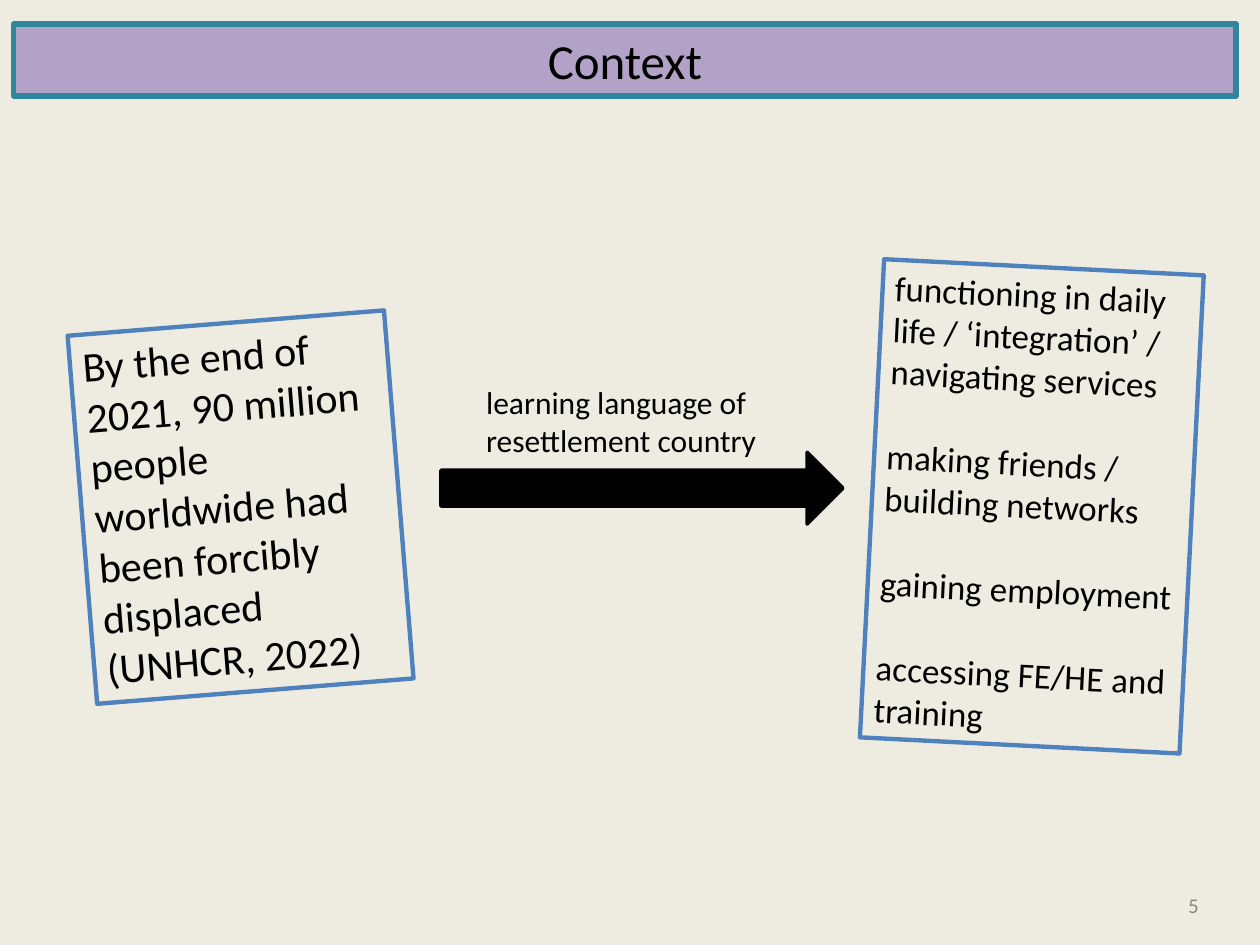
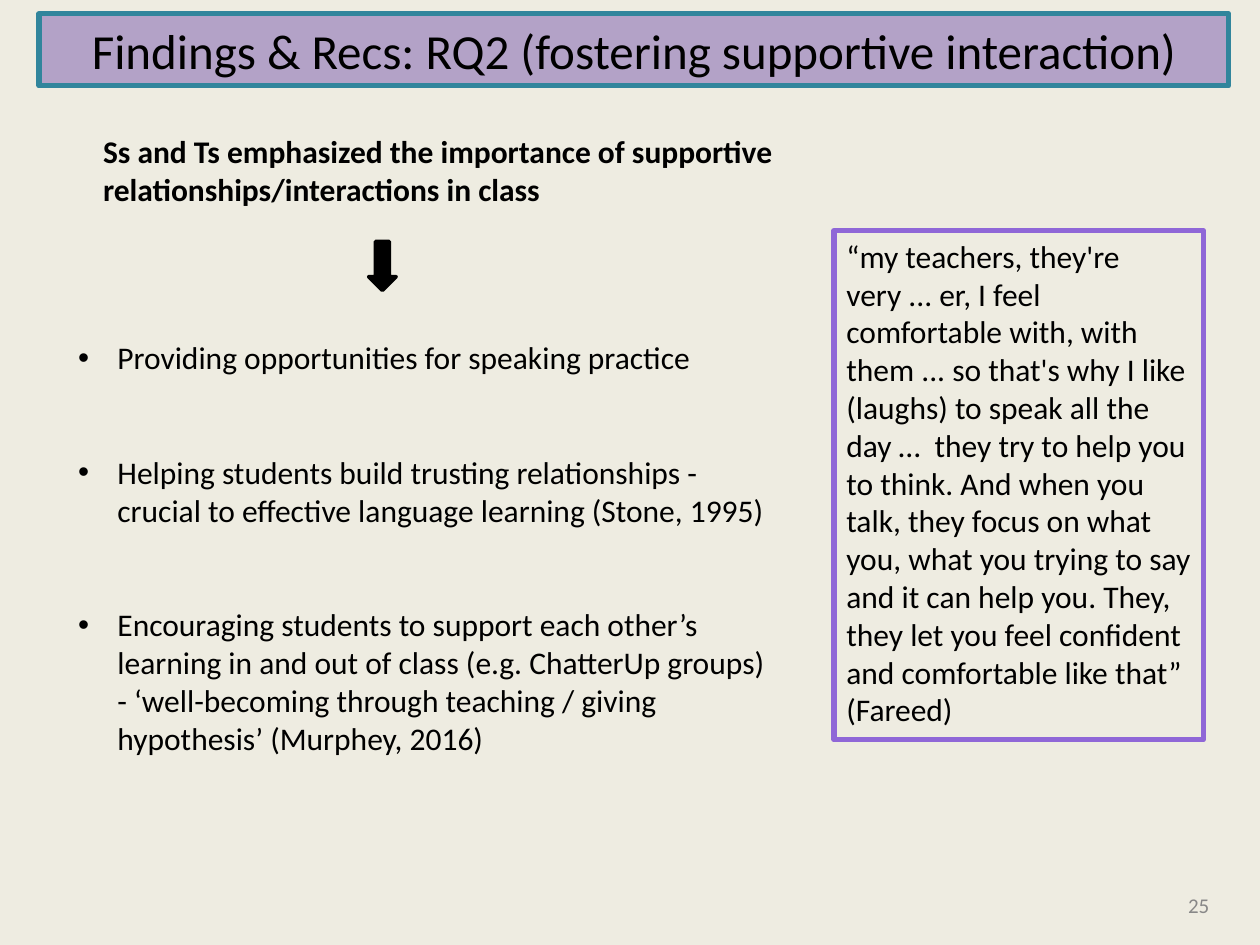
from typing import NamedTuple

from pptx import Presentation
from pptx.dml.color import RGBColor
from pptx.enum import shapes, text
from pptx.oxml import ns
from pptx.oxml.xmlchemy import OxmlElement
from pptx.util import Pt

FONT = "Calibri"
BLACK = RGBColor(0x00, 0x00, 0x00)
GREY = RGBColor(0x88, 0x88, 0x88)
CREAM = RGBColor(0xEE, 0xEC, 0xE1)
LILAC = RGBColor(0xB3, 0xA2, 0xC7)
TEAL = RGBColor(0x31, 0x85, 0x9C)
BLUE = RGBColor(0x4F, 0x81, 0xBD)
VIOLET = RGBColor(0x8F, 0x67, 0xD7)

TITLE_ONLY, TITLE_AND_BODY = 5, 1
LINE_HEIGHT = 1.22
BULLET_INDENT = 22.5


class Box(NamedTuple):
    """Left, top, width and height in points."""
    left: float
    top: float
    width: float
    height: float


class Panel(NamedTuple):
    box: Box
    paragraphs: list[str]
    size: float
    line: RGBColor
    line_width: float
    rotation: float = 0


class Arrow(NamedTuple):
    box: Box
    kind: shapes.MSO_SHAPE


class Label(NamedTuple):
    box: Box
    words: str
    size: float = 18
    color: RGBColor = BLACK
    bold: bool = False
    anchor: text.MSO_ANCHOR = text.MSO_ANCHOR.TOP


def place(sp, box: Box) -> None:
    sp.left, sp.top, sp.width, sp.height = map(Pt, box)


def outline(sp, color: RGBColor, width: float) -> None:
    """Give the shape a solid line with rounded corners."""
    sp.line.color.rgb = color
    sp.line.width = Pt(width)
    sp._element.spPr.find(ns.qn("a:ln")).append(OxmlElement("a:round"))


def write(sp, paragraphs: list[str], size: float, color: RGBColor = BLACK,
          bold: bool = False, align=text.PP_ALIGN.LEFT,
          anchor=text.MSO_ANCHOR.TOP, blank_lines: int = 0) -> None:
    """Fill the shape with paragraphs set blank_lines apart."""
    tf = sp.text_frame
    tf.word_wrap = True
    tf.auto_size = text.MSO_AUTO_SIZE.NONE
    tf.vertical_anchor = anchor
    for i, words in enumerate(paragraphs):
        p = tf.add_paragraph() if i else tf.paragraphs[0]
        p.text = words
        p.alignment = align
        p.space_before = Pt(round(blank_lines * size * LINE_HEIGHT, 1) if i else 0)
        p.font.name, p.font.size, p.font.bold = FONT, Pt(size), bold
        p.font.color.rgb = color


def add_panel(slide, panel: Panel) -> None:
    sp = slide.shapes.add_shape(shapes.MSO_SHAPE.RECTANGLE, *map(Pt, panel.box))
    sp.shadow.inherit = False
    sp.fill.background()
    sp.rotation = panel.rotation
    outline(sp, panel.line, panel.line_width)
    write(sp, panel.paragraphs, panel.size, blank_lines=1)


def add_arrow(slide, arrow: Arrow) -> None:
    sp = slide.shapes.add_shape(arrow.kind, *map(Pt, arrow.box))
    sp.shadow.inherit = False
    sp.fill.solid()
    sp.fill.fore_color.rgb = BLACK
    outline(sp, BLACK, 2)


def add_label(slide, label: Label) -> None:
    sp = slide.shapes.add_textbox(*map(Pt, label.box))
    write(sp, [label.words], label.size, label.color, label.bold,
          anchor=label.anchor)


def fill_bullets(sp, box: Box, items: list[str]) -> None:
    place(sp, box)
    write(sp, items, 18, blank_lines=2)
    for p in sp.text_frame.paragraphs:
        pPr = p._p.get_or_add_pPr()
        pPr.set("marL", str(Pt(BULLET_INDENT)))
        pPr.set("indent", str(Pt(-BULLET_INDENT)))


def add_slide(prs, layout: int, title: str, band: Box, number: int):
    """Add a slide with its title band and page number."""
    slide = prs.slides.add_slide(prs.slide_layouts[layout])
    sp = slide.shapes.title
    place(sp, band)
    sp.fill.solid()
    sp.fill.fore_color.rgb = LILAC
    outline(sp, TEAL, 3)
    write(sp, [title], 28, align=text.PP_ALIGN.CENTER)
    add_label(slide, Label(Box(671.8, 502.6, 46, 28.8), str(number), 12, GREY,
                           anchor=text.MSO_ANCHOR.MIDDLE))
    return slide


def build_context(prs) -> None:
    slide = add_slide(prs, TITLE_ONLY, "Context", Box(7.9, 13.7, 698.4, 41.2), 5)
    add_panel(slide, Panel(
        Box(46.8, 184.3, 181.4, 211),
        ["By the end of 2021, 90 million people worldwide had been forcibly "
         "displaced (UNHCR, 2022)"],
        24, BLUE, 2.5, -4.6))
    add_arrow(slide, Arrow(Box(252, 258.5, 229.7, 41), shapes.MSO_SHAPE.RIGHT_ARROW))
    add_label(slide, Label(Box(270.7, 215.3, 184.3, 51.1),
                           "learning language of resettlement country"))
    add_panel(slide, Panel(
        Box(498.2, 152.6, 182.9, 273.6),
        ["functioning in daily life / ‘integration’ / navigating services",
         "making friends / building networks",
         "gaining employment",
         "accessing FE/HE and training"],
        20, BLUE, 2.5, 2.9))


def build_findings(prs) -> None:
    slide = add_slide(prs, TITLE_AND_BODY,
                      "Findings & Recs: RQ2 (fostering supportive interaction)",
                      Box(22.3, 7.9, 679.7, 41.2), 25)
    fill_bullets(slide.placeholders[1], Box(37.4, 189.7, 409.7, 250), [
        "Providing opportunities for speaking practice",
        "Helping students build trusting relationships - crucial to effective "
        "language learning (Stone, 1995)",
        "Encouraging students to support each other’s learning in and out of "
        "class (e.g. ChatterUp groups) - ‘well-becoming through teaching / "
        "giving hypothesis’ (Murphey, 2016)"])
    add_panel(slide, Panel(
        Box(476.6, 131.8, 211, 290.9),
        ["“my teachers, they're very ... er, I feel comfortable with, with "
         "them ... so that's why I like (laughs) to speak all the day …  they "
         "try to help you to think. And when you talk, they focus on what "
         "you, what you trying to say and it can help you. They, they let you "
         "feel confident and comfortable like that” (Fareed)"],
        18, VIOLET, 3))
    add_arrow(slide, Arrow(Box(210.6, 137.9, 15.8, 28.1), shapes.MSO_SHAPE.DOWN_ARROW))
    add_label(slide, Label(
        Box(51.8, 72, 409.7, 72.7),
        "Ss and Ts emphasized the importance of supportive "
        "relationships/interactions in class", bold=True))


def main() -> None:
    prs = Presentation()
    prs.slide_width, prs.slide_height = Pt(720), Pt(540)
    background = prs.slide_master.background.fill
    background.solid()
    background.fore_color.rgb = CREAM
    build_context(prs)
    build_findings(prs)
    prs.save("out.pptx")


if __name__ == "__main__":
    main()
